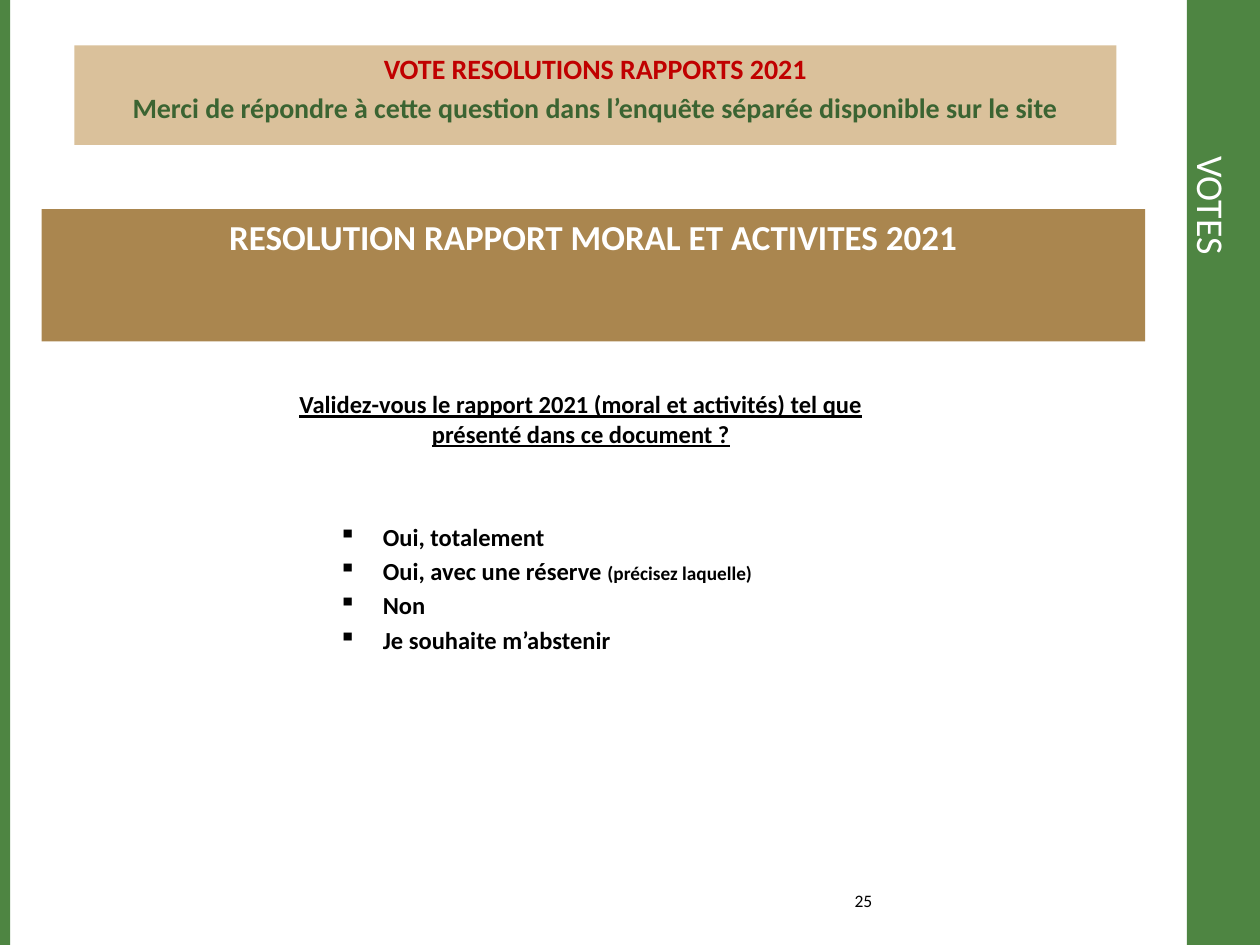
"""Builds the vote slide for the 2021 activity report resolution."""
import pptx
import pptx.dml.color
import pptx.enum.shapes
import pptx.enum.text
import pptx.oxml.ns
import pptx.util
from lxml import etree

Inches = pptx.util.Inches
Pt = pptx.util.Pt
ALIGN = pptx.enum.text.PP_ALIGN
ANCHOR = pptx.enum.text.MSO_ANCHOR


def rgb(value):
    """Turn a hex string into a colour."""
    return pptx.dml.color.RGBColor.from_string(value)


class SlideBuilder:
    """Holds the style and the current slide."""

    font = "Calibri"
    green, brown, sand = "4E8542", "AA864F", "DAC19B"
    red, dark_green, white, black = "C00000", "3B6432", "FFFFFF", "000000"

    def __init__(self, slide):
        """Keep the slide to draw on."""
        self.slide = slide

    def bar(self, box, color):
        """Add a plain filled rectangle."""
        sp = self.slide.shapes.add_shape(
            pptx.enum.shapes.MSO_SHAPE.RECTANGLE, *map(Inches, box))
        sp.shadow.inherit = False
        sp.fill.solid()
        sp.fill.fore_color.rgb = rgb(color)
        sp.line.fill.background()
        return sp

    def text_frame(self, box, anchor=ANCHOR.TOP):
        """Add a wrapping text box and return its frame."""
        tf = self.slide.shapes.add_textbox(*map(Inches, box)).text_frame
        tf.word_wrap = True
        tf.vertical_anchor = anchor
        return tf

    def style(self, r, size, color, bold=False, underline=False):
        """Format one run."""
        r.font.name = self.font
        r.font.size = Pt(size)
        r.font.color.rgb = rgb(color)
        r.font.bold = bold
        r.font.underline = underline

    def line(self, p, text, size, color, align=ALIGN.CENTER, **look):
        """Fill a paragraph with one formatted run."""
        p.text = text
        p.alignment = align
        self.style(p.runs[0], size, color, **look)

    def banner(self, box, fill, lines, size):
        """Add a filled band with bold centred lines."""
        tf = self.bar(box, fill).text_frame
        tf.word_wrap = True
        tf.vertical_anchor = ANCHOR.TOP
        for i, (text, color) in enumerate(lines):
            p = tf.add_paragraph() if i else tf.paragraphs[0]
            if i:
                p.space_before = Pt(size * 0.2)
            self.line(p, text, size, color, bold=True)

    def side_title(self, box, text):
        """Add a title that reads downwards."""
        tf = self.text_frame(box, ANCHOR.MIDDLE)
        tf._txBody.bodyPr.set("vert", "vert")
        self.line(tf.paragraphs[0], text, 21.6, self.white, ALIGN.LEFT)

    def bullet(self, p):
        """Give a paragraph a square bullet with a hanging indent."""
        pPr = p._p.get_or_add_pPr()
        pPr.set("marL", str(Inches(0.85)))
        pPr.set("indent", str(-Inches(0.35)))
        mark = etree.SubElement(pPr, pptx.oxml.ns.qn("a:buChar"))
        mark.set("char", "▪")

    def question(self, box, text, answers, size):
        """Add an underlined question followed by bulleted answers."""
        tf = self.text_frame(box)
        self.line(tf.paragraphs[0], text, size, self.black, bold=True, underline=True)
        for i, (answer, note) in enumerate(answers):
            p = tf.add_paragraph()
            self.bullet(p)
            p.space_before = Pt(size * 0.2 if i else size * 3)
            self.line(p, answer, size, self.black, ALIGN.LEFT, bold=True)
            if note:
                r = p.add_run()
                r.text = note
                self.style(r, 11, self.black, bold=True)

    def page_number(self, box, text):
        """Add the page number."""
        tf = self.text_frame(box, ANCHOR.MIDDLE)
        self.line(tf.paragraphs[0], text, 10, self.black, ALIGN.RIGHT)


def main():
    """Build and save the slide."""
    prs = pptx.Presentation()
    prs.slide_width, prs.slide_height = Inches(10), Inches(7.5)
    s = SlideBuilder(prs.slides.add_slide(prs.slide_layouts[6]))
    s.bar((9.42, 0, 0.58, 7.5), s.green)
    s.bar((0, 0, 0.08, 7.5), s.green)
    s.side_title((9.33, 1.14, 0.58, 5.7), "VOTES")
    s.banner((0.33, 1.66, 8.76, 1.05), s.brown,
             [("RESOLUTION RAPPORT MORAL ET ACTIVITES 2021", s.white)], 20)
    s.question(
        (2.09, 3.04, 5.04, 2.25),
        "Validez-vous le rapport 2021 (moral et activités) tel que présenté dans ce document ?",
        [("Oui, totalement", ""),
         ("Oui, avec une réserve ", "(précisez laquelle)"),
         ("Non", ""),
         ("Je souhaite m’abstenir", "")], 14)
    s.banner((0.59, 0.36, 8.27, 0.79), s.sand, [
        ("VOTE RESOLUTIONS RAPPORTS 2021", s.red),
        ("Merci de répondre à cette question dans l’enquête séparée disponible sur le site",
         s.dark_green)], 16)
    s.page_number((5.94, 6.98, 1.08, 0.33), "25")
    prs.save("out.pptx")


if __name__ == "__main__":
    main()
